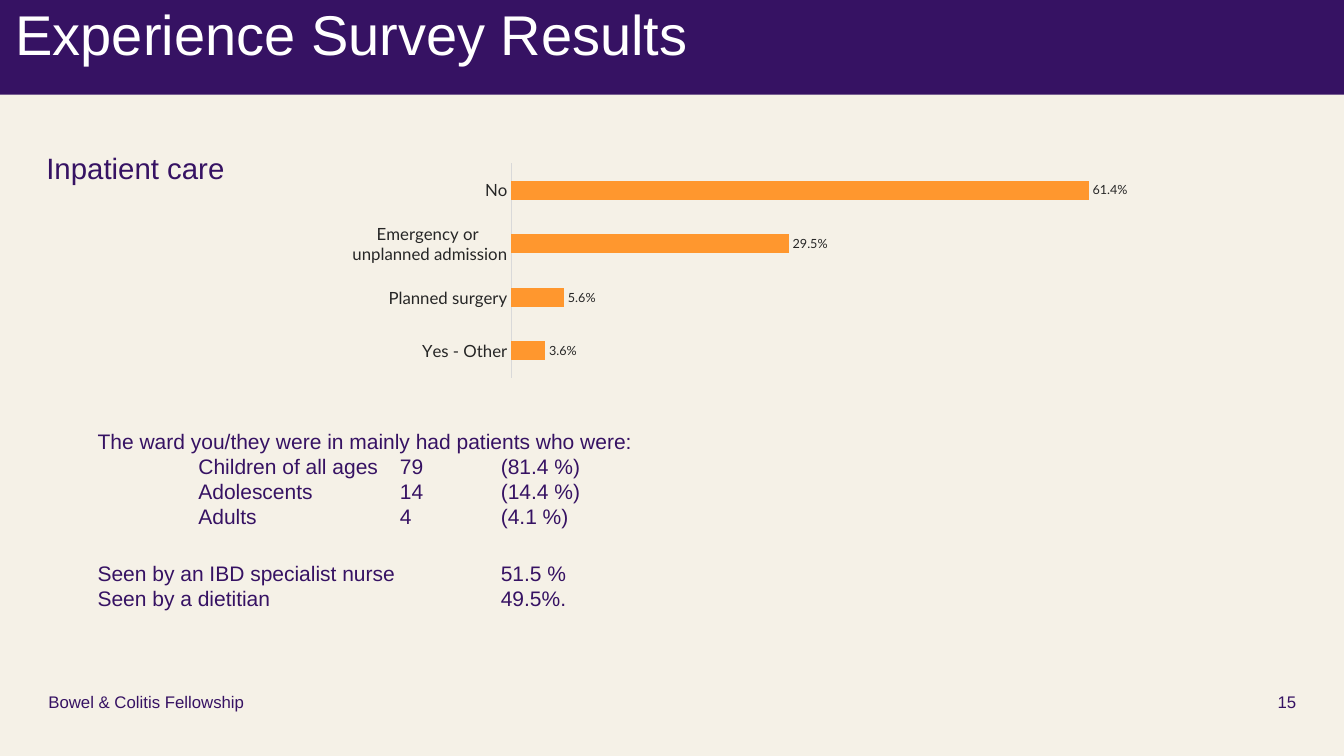
from lxml import etree
from pptx import Presentation
from pptx.chart.data import CategoryChartData
from pptx.dml.color import RGBColor
from pptx.enum.chart import XL_CHART_TYPE, XL_LABEL_POSITION, XL_TICK_MARK
from pptx.enum.shapes import MSO_SHAPE
from pptx.enum.text import MSO_ANCHOR, PP_ALIGN
from pptx.oxml.ns import qn
from pptx.util import Pt

BAR = XL_CHART_TYPE.BAR_CLUSTERED
OUTSIDE_END = XL_LABEL_POSITION.OUTSIDE_END
NO_TICK = XL_TICK_MARK.NONE
RECT = MSO_SHAPE.RECTANGLE
TOP, BOTTOM = MSO_ANCHOR.TOP, MSO_ANCHOR.BOTTOM
LEFT, RIGHT = PP_ALIGN.LEFT, PP_ALIGN.RIGHT

PURPLE = RGBColor(0x36, 0x12, 0x63)
CREAM = RGBColor(0xF5, 0xF1, 0xE7)
WHITE = RGBColor(0xFF, 0xFF, 0xFF)
ORANGE = RGBColor(0xFF, 0x97, 0x2E)
INK = RGBColor(0x26, 0x26, 0x26)
GREY = RGBColor(0xD9, 0xD9, 0xD9)

TITLE = "Experience Survey Results"
SUBTITLE = "Inpatient care"
FOOTER = "Bowel & Colitis Fellowship"
PAGE = "15"
ADMISSIONS = [
    ("Yes - Other", 0.036),
    ("Planned surgery", 0.056),
    ("Emergency or \nunplanned admission", 0.295),
    ("No", 0.614),
]
WARD = [
    "The ward you/they were in mainly had patients who were:",
    "\tChildren of all ages\t79\t(81.4 %)",
    "\tAdolescents\t14\t(14.4 %)",
    "\tAdults\t4\t(4.1 %)",
]
SEEN_BY = [
    "Seen by an IBD specialist nurse\t51.5 %",
    "Seen by a dietitian\t49.5%.",
]
PLOT = {"x": 0.258, "y": 0.027, "w": 0.716, "h": 0.933}


def write(tf, lines, size, color=PURPLE, align=LEFT, anchor=TOP, margins=(0, 0), tabs=()):
    tf.word_wrap = True
    tf.vertical_anchor = anchor
    tf.margin_left = tf.margin_right = Pt(margins[0])
    tf.margin_top = tf.margin_bottom = Pt(margins[1])
    for i, line in enumerate(lines):
        p = tf.paragraphs[0] if i == 0 else tf.add_paragraph()
        p.alignment = align
        if tabs:
            tab_list = etree.SubElement(p._p.get_or_add_pPr(), qn("a:tabLst"))
            for pos in tabs:
                etree.SubElement(tab_list, qn("a:tab"), pos=str(Pt(pos)), algn="l")
        r = p.add_run()
        r.text = line
        r.font.name = "Arial"
        r.font.size = Pt(size)
        r.font.color.rgb = color


def add_text(s, box, lines, size, **style):
    tb = s.shapes.add_textbox(*map(Pt, box))
    write(tb.text_frame, lines, size, **style)


def style_font(font, size):
    font.name = "Lato"
    font.size = Pt(size)
    font.color.rgb = INK


def add_admissions_chart(s):
    data = CategoryChartData(number_format="0.0%")
    data.categories = [name for name, _ in ADMISSIONS]
    data.add_series("Series 1", [share for _, share in ADMISSIONS])
    box = map(Pt, (195.84, 112.32, 656.64, 164.16))
    chart = s.shapes.add_chart(BAR, *box, data).chart
    chart.has_legend = False
    chart.has_title = False
    style_font(chart.font, 9)

    plot = chart.plots[0]
    plot.gap_width = 182
    plot.vary_by_categories = False
    fill = plot.series[0].format.fill
    fill.solid()
    fill.fore_color.rgb = ORANGE
    plot.has_data_labels = True
    labels = plot.data_labels
    labels.show_value = True
    labels.position = OUTSIDE_END
    labels.number_format = "0.0%"
    labels.number_format_is_linked = False
    style_font(labels.font, 9)

    cat = chart.category_axis
    cat.major_tick_mark = cat.minor_tick_mark = NO_TICK
    cat.format.line.color.rgb = GREY
    cat.format.line.width = Pt(0.75)
    style_font(cat.tick_labels.font, 12)
    val = chart.value_axis
    val.minimum_scale, val.maximum_scale = 0, 0.7
    val.has_major_gridlines = False
    val.visible = False

    area = chart._chartSpace.find(".//" + qn("c:plotArea"))
    for old in area.findall(qn("c:layout")):
        area.remove(old)
    layout = etree.Element(qn("c:layout"))
    area.insert(0, layout)
    manual = etree.SubElement(layout, qn("c:manualLayout"))
    settings = {"layoutTarget": "inner", "xMode": "edge", "yMode": "edge", **PLOT}
    for tag, value in settings.items():
        etree.SubElement(manual, qn("c:" + tag), val=str(value))


def main():
    prs = Presentation()
    prs.slide_width, prs.slide_height = Pt(960), Pt(540)
    s = prs.slides.add_slide(prs.slide_layouts[6])
    s.background.fill.solid()
    s.background.fill.fore_color.rgb = CREAM

    sp = s.shapes.add_shape(RECT, 0, 0, Pt(960), Pt(67.68))
    sp.shadow.inherit = False
    sp.fill.solid()
    sp.fill.fore_color.rgb = PURPLE
    sp.line.fill.background()
    write(sp.text_frame, [TITLE], 40, color=WHITE, margins=(11.1, 0))

    add_text(s, (34.56, 482.4, 342.72, 25.92), [FOOTER], 12, anchor=BOTTOM)
    add_text(s, (893.52, 482.4, 32.4, 25.92), [PAGE], 12, align=RIGHT, anchor=BOTTOM)
    add_text(s, (33.12, 107.28, 160, 36), [SUBTITLE], 21)
    add_admissions_chart(s)
    add_text(s, (62.64, 302.4, 864, 79.92), WARD, 15, margins=(7.2, 3.6), tabs=(72, 216, 288))
    add_text(s, (62.64, 396.7, 486.72, 44.64), SEEN_BY, 15, margins=(7.2, 3.6), tabs=(288,))
    prs.save("out.pptx")


if __name__ == "__main__":
    main()
